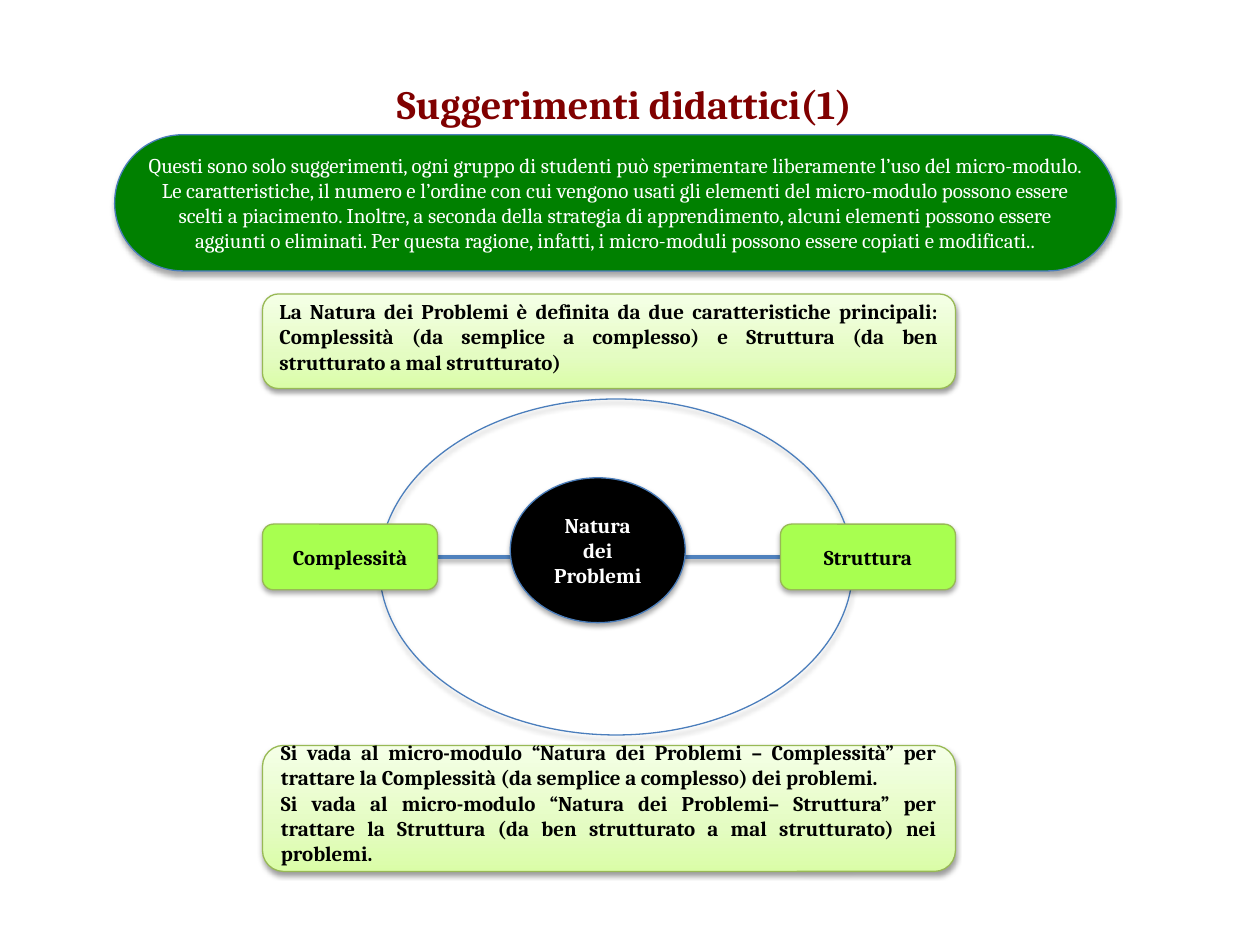
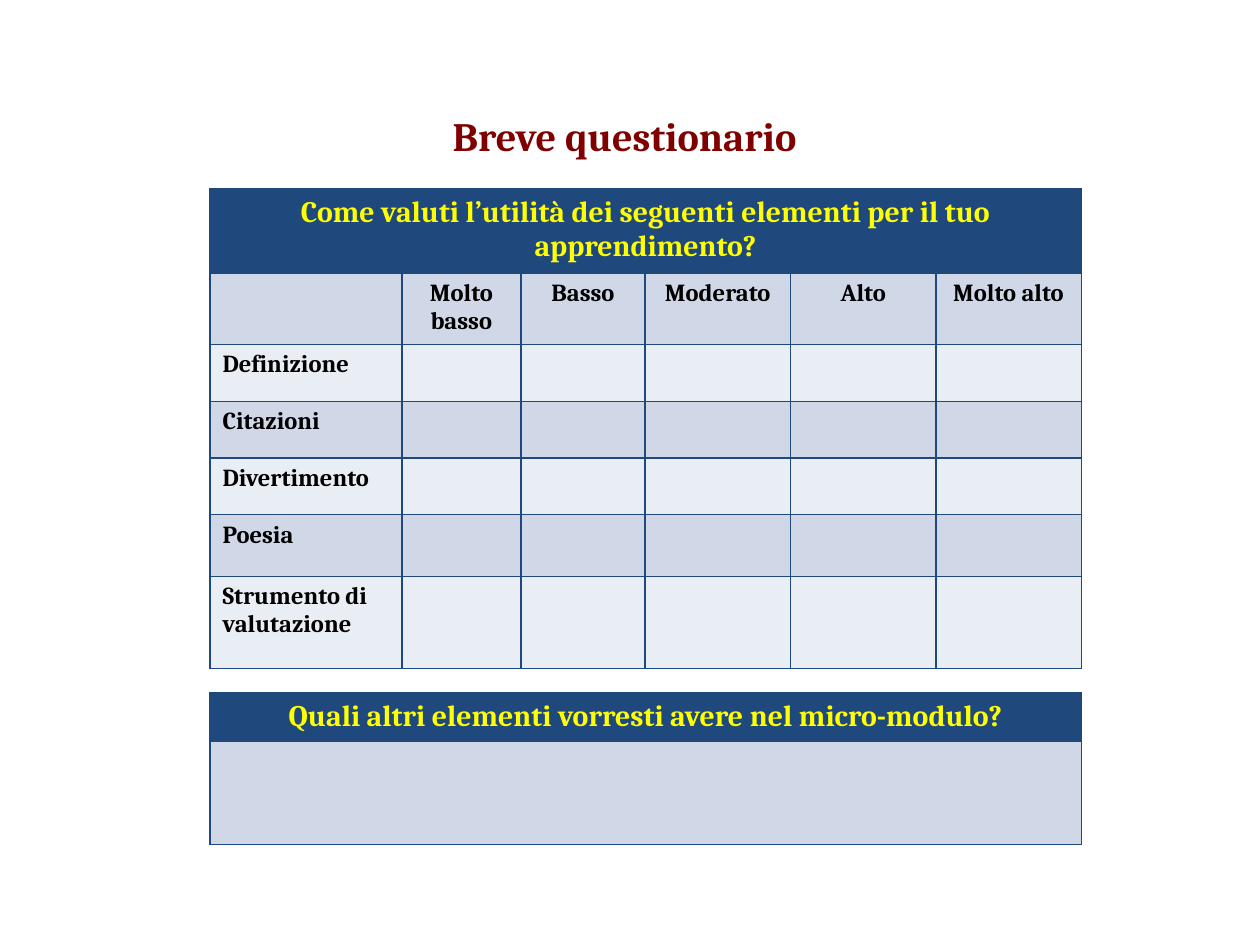
from copy import deepcopy
from dataclasses import dataclass

from lxml.etree import SubElement
from pptx import Presentation
from pptx.dml.color import RGBColor
from pptx.enum.shapes import MSO_CONNECTOR as Connector
from pptx.enum.shapes import MSO_SHAPE as Preset
from pptx.enum.text import MSO_ANCHOR as Anchor
from pptx.enum.text import PP_ALIGN as Align
from pptx.oxml.ns import qn
from pptx.util import Pt


@dataclass(frozen=True)
class Theme:
    font: str = "Cambria"
    title: str = "800000"
    white: str = "FFFFFF"
    black: str = "000000"
    pill: str = "008000"
    lime: str = "A8FF50"
    lime_edge: str = "98B955"
    blue_edge: str = "4B7EBC"
    link: str = "4F81BD"
    navy: str = "1F497D"
    yellow: str = "FFFF00"
    bands: tuple[str, str] = ("D0D8E8", "E9EDF4")
    pale_stops: tuple = ((0, "DAFDA7"), (0.35, "E4FCC2"), (1, "F5FFE7"))
    title_size: float = 23
    heading_size: float = 17
    cell_size: float = 14
    body_size: float = 12


THEME = Theme()


@dataclass(frozen=True)
class Shadow:
    alpha: int
    distance: float
    blur: float = 3.1


STRONG = Shadow(35, 1.8)
SOFT = Shadow(38, 1.6)


@dataclass(frozen=True)
class Area:
    left: float
    top: float
    width: float
    height: float

    def lengths(self) -> tuple:
        return Pt(self.left), Pt(self.top), Pt(self.width), Pt(self.height)


@dataclass(frozen=True)
class Node:
    area: Area
    preset: Preset
    edge: str
    fill: str | tuple | None = None
    paras: tuple[str, ...] = ()
    ink: str = THEME.black
    bold: bool = True
    align: Align = Align.CENTER
    shadow: Shadow = STRONG
    rounding: float | None = None
    side_inset: float = 7.2
    bottom_inset: float = 3.6


@dataclass(frozen=True)
class Grid:
    area: Area
    columns: tuple[float, ...]
    rows: tuple[float, ...]
    heading: str
    scale: tuple[str, ...] = ()
    items: tuple[str, ...] = ()


LEFT, WIDTH = 150, 396
TAG_WIDTH, TAG_TOP, TAG_HEIGHT = 100, 299.5, 37.5
RIGHT_TAG = LEFT + WIDTH - TAG_WIDTH
LINK_Y = TAG_TOP + TAG_HEIGHT / 2


def tag(label: str, left: float) -> Node:
    return Node(Area(left, TAG_TOP, TAG_WIDTH, TAG_HEIGHT), Preset.ROUNDED_RECTANGLE,
                THEME.lime_edge, THEME.lime, (label,))


def note(top: float, height: float, bottom_inset: float, *paras: str) -> Node:
    return Node(Area(LEFT, top, WIDTH, height), Preset.ROUNDED_RECTANGLE,
                THEME.lime_edge, THEME.pale_stops, paras, align=Align.JUSTIFY,
                shadow=SOFT, bottom_inset=bottom_inset)


DIAGRAM = (
    Node(Area(291.6, 273, 100, 82.8), Preset.OVAL, THEME.blue_edge, THEME.black,
         ("Natura dei Problemi",), THEME.white),
    Node(Area(216.8, 228, 270.5, 192), Preset.OVAL, THEME.blue_edge),
    tag("Struttura", RIGHT_TAG),
    tag("Complessità", LEFT),
)

PANELS = (
    note(168, 54, 9,
         "La Natura dei Problemi è definita da due caratteristiche principali: "
         "Complessità (da semplice a complesso) e Struttura (da ben strutturato "
         "a mal strutturato)"),
    note(426, 72, 10,
         "Si vada al micro-modulo “Natura dei Problemi – Complessità” per trattare "
         "la Complessità (da semplice a complesso) dei problemi.",
         "Si vada al micro-modulo “Natura dei Problemi– Struttura” per trattare la "
         "Struttura (da ben strutturato a mal strutturato) nei problemi."),
    Node(Area(65.5, 77, 572.4, 77.8), Preset.ROUNDED_RECTANGLE, THEME.blue_edge, THEME.pill,
         ("Questi sono solo suggerimenti, ogni gruppo di studenti può sperimentare "
          "liberamente l’uso del micro-modulo. Le caratteristiche, il numero e l’ordine "
          "con cui vengono usati gli elementi del micro-modulo possono essere scelti a "
          "piacimento. Inoltre, a seconda della strategia di apprendimento, alcuni "
          "elementi possono essere aggiunti o eliminati. Per questa ragione, infatti, i "
          "micro-moduli possono essere copiati e modificati..",),
         THEME.white, bold=False, rounding=0.5, side_inset=6),
)

GRIDS = (
    Grid(Area(120, 108, 498, 255), (109.7, 68, 71, 83.1, 83.1, 83.1),
         (37.4, 32.4, 32.4, 32.4, 32.4, 35.3, 52.6),
         "Come valuti l’utilità dei seguenti elementi per il tuo apprendimento?",
         ("Molto basso", "Basso", "Moderato", "Alto", "Molto alto"),
         ("Definizione", "Citazioni", "Divertimento", "Poesia", "Strumento di valutazione")),
    Grid(Area(120, 396, 498, 86.4), (498,), (27.4, 59),
         "Quali altri elementi vorresti avere nel micro-modulo?"),
)


def color(code: str) -> RGBColor:
    return RGBColor.from_string(code)


def write(para, text: str, size: float, ink: str, bold: bool = True,
          align: Align = Align.CENTER) -> None:
    para.alignment = align
    span = para.add_run()
    span.text = text
    span.font.name = THEME.font
    span.font.size = Pt(size)
    span.font.bold = bold
    span.font.color.rgb = color(ink)


def cast_shadow(drawn, shadow: Shadow) -> None:
    properties = drawn.element.spPr
    effects = properties.find(qn("a:effectLst"))
    if effects is None:
        effects = SubElement(properties, qn("a:effectLst"))
    outer = SubElement(effects, qn("a:outerShdw"), blurRad=str(Pt(shadow.blur)),
                       dist=str(Pt(shadow.distance)), dir="5400000", rotWithShape="0")
    tint = SubElement(outer, qn("a:srgbClr"), val=THEME.black)
    SubElement(tint, qn("a:alpha"), val=str(shadow.alpha * 1000))


def paint(shape, fill: str | tuple | None) -> None:
    if fill is None:
        shape.fill.background()
    elif isinstance(fill, str):
        shape.fill.solid()
        shape.fill.fore_color.rgb = color(fill)
    else:
        shape.fill.gradient()
        shape.fill.gradient_angle = 90
        stop_list = next(shape.element.spPr.iter(qn("a:gsLst")))
        stop_list.append(deepcopy(stop_list[0]))
        for stop, (position, code) in zip(shape.fill.gradient_stops, fill):
            stop.position = position
            stop.color.rgb = color(code)


def draw_node(shapes, node: Node) -> None:
    shape = shapes.add_shape(node.preset, *node.area.lengths())
    if node.rounding is not None:
        shape.adjustments[0] = node.rounding
    paint(shape, node.fill)
    shape.line.color.rgb = color(node.edge)
    shape.line.width = Pt(0.75)
    shape.shadow.inherit = False
    cast_shadow(shape, node.shadow)
    box = shape.text_frame
    box.word_wrap = True
    box.vertical_anchor = Anchor.MIDDLE
    box.margin_left = box.margin_right = Pt(node.side_inset)
    box.margin_bottom = Pt(node.bottom_inset)
    for index, text in enumerate(node.paras):
        para = box.add_paragraph() if index else box.paragraphs[0]
        write(para, text, THEME.body_size, node.ink, node.bold, node.align)


def draw_link(shapes) -> None:
    link = shapes.add_connector(Connector.STRAIGHT, Pt(LEFT + TAG_WIDTH), Pt(LINK_Y),
                                Pt(RIGHT_TAG), Pt(LINK_Y))
    link.line.color.rgb = color(THEME.link)
    link.line.width = Pt(2)
    cast_shadow(link, SOFT)


def add_page(deck, title: str, top: float):
    page = deck.slides.add_slide(deck.slide_layouts[6])
    box = page.shapes.add_textbox(*Area(168, top, 378, 42).lengths()).text_frame
    box.word_wrap = True
    write(box.paragraphs[0], title, THEME.title_size, THEME.title)
    return page


def style_cell(cell, fill: str) -> None:
    cell.fill.solid()
    cell.fill.fore_color.rgb = color(fill)
    properties = cell._tc.get_or_add_tcPr()
    for index, side in enumerate(("lnL", "lnR", "lnT", "lnB")):
        border = properties.makeelement(qn(f"a:{side}"), {"w": str(Pt(1))})
        solid = SubElement(border, qn("a:solidFill"))
        SubElement(solid, qn("a:srgbClr"), val=THEME.navy)
        properties.insert(index, border)


def draw_grid(page, grid: Grid) -> None:
    frame = page.shapes.add_table(len(grid.rows), len(grid.columns), *grid.area.lengths())
    table = frame.table
    table.first_row = table.horz_banding = False
    for column, width in zip(table.columns, grid.columns):
        column.width = Pt(width)
    for index, (row, height) in enumerate(zip(table.rows, grid.rows)):
        row.height = Pt(height)
        fill = THEME.bands[(index - 1) % 2] if index else THEME.navy
        for cell in row.cells:
            style_cell(cell, fill)
    heading = table.cell(0, 0)
    if len(grid.columns) > 1:
        heading.merge(table.cell(0, len(grid.columns) - 1))
    write(heading.text_frame.paragraphs[0], grid.heading, THEME.heading_size, THEME.yellow)
    for index, label in enumerate(grid.scale, 1):
        write(table.cell(1, index).text_frame.paragraphs[0], label,
              THEME.cell_size, THEME.black)
    for index, label in enumerate(grid.items, 2):
        write(table.cell(index, 0).text_frame.paragraphs[0], label,
              THEME.cell_size, THEME.black, align=Align.LEFT)


def main() -> None:
    deck = Presentation()
    deck.slide_width, deck.slide_height = Pt(720), Pt(540)

    hints = add_page(deck, "Suggerimenti didattici(1)", 42)
    diagram = hints.shapes.add_group_shape().shapes
    draw_link(diagram)
    for node in DIAGRAM:
        draw_node(diagram, node)
    for panel in PANELS:
        draw_node(hints.shapes, panel)

    survey = add_page(deck, "Breve questionario", 60)
    for grid in GRIDS:
        draw_grid(survey, grid)

    deck.save("out.pptx")


if __name__ == "__main__":
    main()
